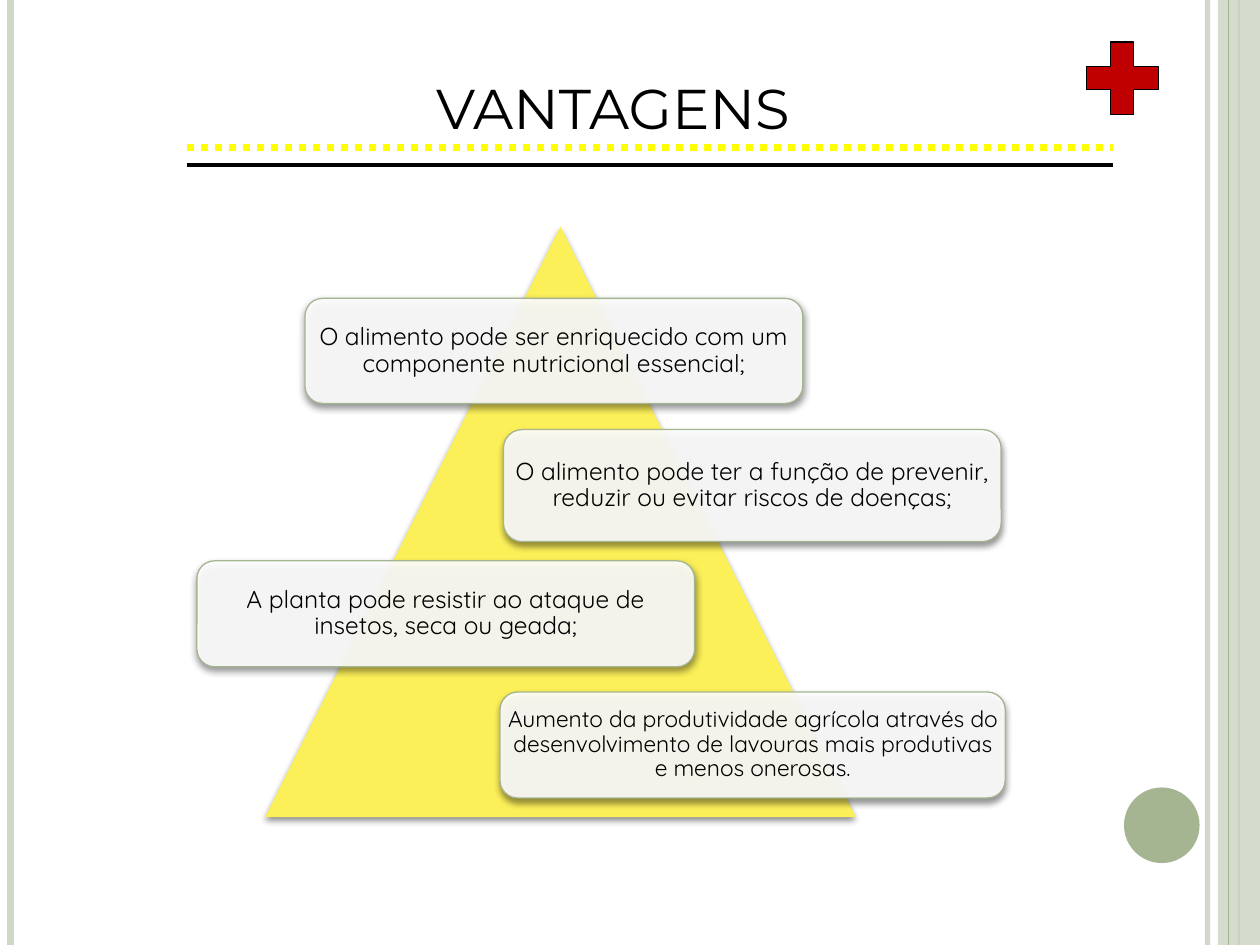
from pptx import Presentation
from pptx.dml.color import RGBColor
from pptx.enum.dml import MSO_LINE
from pptx.enum.shapes import MSO_CONNECTOR, MSO_SHAPE
from pptx.enum.text import MSO_ANCHOR, PP_ALIGN
from pptx.oxml import parse_xml
from pptx.oxml.ns import nsdecls, qn
from pptx.util import Pt

COLORS = {"black": "000000", "white": "FFFFFF", "sage": "A5B592", "pale": "CFD7C7",
          "yellow": "FFFF00", "lemon": "FCF059", "red": "C00000"}
SLIDE_W, SLIDE_H = 720, 540
CARD_TOP, CARD_STEP = 170.5, 75
CARDS = [  # left, width, height, text size, text
    (174.3, 284.4, 60, 14,
     "O alimento pode ser enriquecido com um componente nutricional essencial;"),
    (287.7, 284.4, 64, 14,
     "O alimento pode ter a função de prevenir, reduzir ou evitar riscos de doenças;"),
    (112.5, 284.4, 60.5, 14,
     "A planta pode resistir ao ataque de insetos, seca ou geada;"),
    (285.7, 288.7, 60.5, 13,
     "Aumento da produtividade agrícola através do desenvolvimento de lavouras "
     "mais produtivas e menos onerosas."),
]


def rgb(name):
    return RGBColor.from_string(COLORS[name])


def set_alpha(shape, percent):
    """Make the first colour of a shape (fill) or connector (line) translucent."""
    clr = next(shape._element.spPr.iter(qn("a:srgbClr")))
    clr.append(parse_xml(f'<a:alpha {nsdecls("a")} val="{percent * 1000}"/>'))


def write(tf, text, font, size, color="black", align=PP_ALIGN.LEFT,
          anchor=MSO_ANCHOR.TOP, inset=(7.2, 3.6), spacing=1.0):
    tf.word_wrap = True
    tf.vertical_anchor = anchor
    tf.margin_left = tf.margin_right = Pt(inset[0])
    tf.margin_top = tf.margin_bottom = Pt(inset[1])
    p = tf.paragraphs[0]
    p.alignment = align
    p.line_spacing = spacing
    p.space_before = Pt(0)
    r = p.add_run()
    r.text = text
    r.font.name = font
    r.font.size = Pt(size)
    r.font.color.rgb = rgb(color)


class SlideBuilder:
    title_font = "Montserrat"
    body_font = "Quicksand"

    def __init__(self, prs):
        self.s = prs.slides.add_slide(prs.slide_layouts[5])

    def title(self, text, x, y, w, h):
        sp = self.s.shapes.title
        sp.left, sp.top, sp.width, sp.height = Pt(x), Pt(y), Pt(w), Pt(h)
        write(sp.text_frame, text, self.title_font, 32)

    def line(self, x1, y1, x2, y2, color, width, dash=None, alpha=None):
        cn = self.s.shapes.add_connector(MSO_CONNECTOR.STRAIGHT,
                                         Pt(x1), Pt(y1), Pt(x2), Pt(y2))
        cn.line.color.rgb = rgb(color)
        cn.line.width = Pt(width)
        if dash:
            cn.line.dash_style = dash
        if alpha:
            set_alpha(cn, alpha)
        cn._element.spPr.append(parse_xml(f'<a:effectLst {nsdecls("a")}/>'))

    def shape(self, kind, x, y, w, h, fill, line=None, alpha=None, shadow=False):
        sp = self.s.shapes.add_shape(kind, Pt(x), Pt(y), Pt(w), Pt(h))
        sp.fill.solid()
        sp.fill.fore_color.rgb = rgb(fill)
        if alpha:
            set_alpha(sp, alpha)
        if line:
            sp.line.color.rgb = rgb(line)
            sp.line.width = Pt(0.75)
        else:
            sp.line.fill.background()
        sp.shadow.inherit = False
        if shadow:
            self.drop_shadow(sp)
        return sp

    def drop_shadow(self, sp):
        sp._element.spPr.find(qn("a:effectLst")).append(parse_xml(
            f'<a:outerShdw {nsdecls("a")} blurRad="{Pt(4)}" dist="{Pt(2)}" '
            f'dir="5400000" rotWithShape="0"><a:srgbClr val="{COLORS["black"]}">'
            '<a:alpha val="45000"/></a:srgbClr></a:outerShdw>'))

    def card(self, x, y, w, h, size, text):
        sp = self.shape(MSO_SHAPE.ROUNDED_RECTANGLE, x, y, w, h, "white",
                        line="sage", alpha=90, shadow=True)
        write(sp.text_frame, text, self.body_font, size, align=PP_ALIGN.CENTER,
              anchor=MSO_ANCHOR.MIDDLE, inset=(0.5, 0.5), spacing=0.9)

    def frame(self):
        """Vertical stripes and the disc at the slide's edges."""
        self.line(690, 0, 690, SLIDE_H, "pale", 3, alpha=93)
        self.line(6, 0, 6, SLIDE_H, "pale", 4.5)
        self.line(708, 0, 708, SLIDE_H, "sage", 1.5)
        self.shape(MSO_SHAPE.RECTANGLE, 696, 0, 24, SLIDE_H, "pale", alpha=87)
        self.line(702, 0, 702, SLIDE_H, "sage", 0.75)
        self.shape(MSO_SHAPE.OVAL, 642.3, 450, 43.2, 43.2, "sage")


def main():
    prs = Presentation()
    prs.slide_width, prs.slide_height = Pt(SLIDE_W), Pt(SLIDE_H)
    b = SlideBuilder(prs)
    b.frame()
    b.line(106.8, 84.3, 635.8, 84.3, "yellow", 4, dash=MSO_LINE.ROUND_DOT)
    b.line(106.8, 94.4, 635.8, 94.4, "black", 2.5)
    b.title("VANTAGENS", 242, 38.2, 247.7, 46)
    b.shape(MSO_SHAPE.MATH_PLUS, 613.3, 16.7, 56, 56, "red", line="black")
    b.shape(MSO_SHAPE.ISOSCELES_TRIANGLE, 151.5, 129.5, 337.5, 337.5, "lemon", shadow=True)
    for i, (x, w, h, size, text) in enumerate(CARDS):
        b.card(x, CARD_TOP + i * CARD_STEP, w, h, size, text)
    prs.save("out.pptx")


if __name__ == "__main__":
    main()
